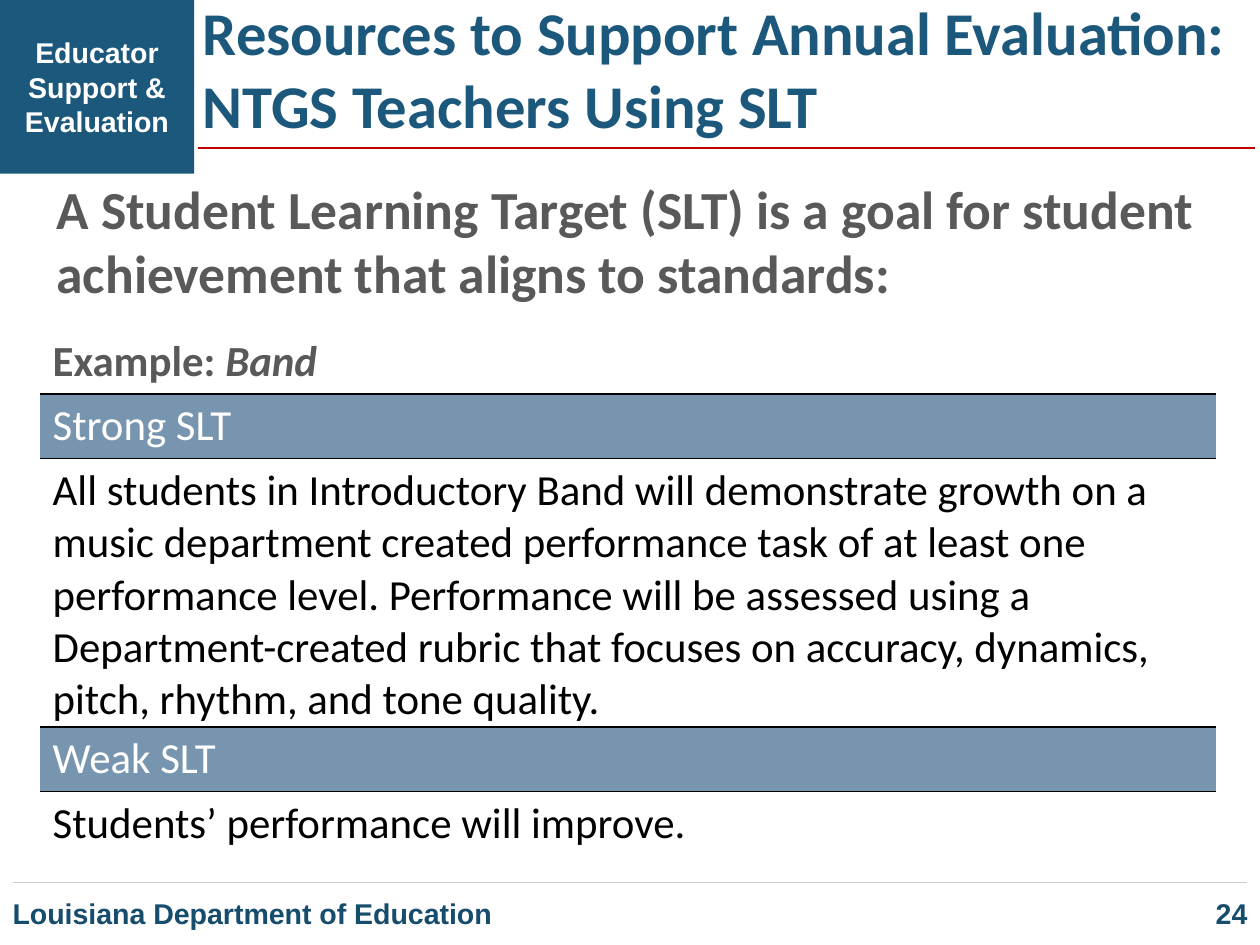
from dataclasses import dataclass

import pptx
import pptx.dml.color
import pptx.enum.shapes
import pptx.enum.text
import pptx.oxml
import pptx.oxml.ns
import pptx.util
from lxml import etree

WIDTH, HEIGHT = pptx.util.Inches(9.8), pptx.util.Inches(7.35)
NAVY, DEEP_NAVY, BAND_BLUE = "1B587C", "164C6C", "7895AF"
RED, GREY, LIGHT_GREY = "C00000", "595959", "CCCCCC"
WHITE, BLACK = "FFFFFF", "000000"
PLAIN_TABLE_STYLE = "{2D5ABB26-0587-4C30-8999-92F81FD0307C}"

ANCHOR = pptx.enum.text.MSO_ANCHOR
ALIGN = pptx.enum.text.PP_ALIGN


@dataclass
class Area:
    """A rectangle in percent of the slide's width and height."""
    left: float
    top: float
    width: float
    height: float

    def emu(self) -> tuple:
        return across(self.left), down(self.top), across(self.width), down(self.height)


@dataclass
class Label:
    text: str
    area: Area
    size: float
    color: str
    font: str = "Calibri"
    align: ALIGN = ALIGN.LEFT
    anchor: ANCHOR = ANCHOR.TOP
    left_inset: float = 0.1


@dataclass
class Rule:
    start: float
    end: float
    row: float
    color: str
    weight: float


@dataclass
class TableRow:
    runs: list
    height: float
    color: str
    fill: str = ""
    bold: bool = False


def across(share: float) -> int:
    return round(WIDTH * share / 100)


def down(share: float) -> int:
    return round(HEIGHT * share / 100)


def rgb(value: str):
    return pptx.dml.color.RGBColor.from_string(value)


def add_text(paragraph, text: str, *, size: float, color: str, font: str = "Calibri",
             bold: bool = True, italic: bool = False) -> None:
    run = paragraph.add_run()
    run.text = text
    run.font.name = font
    run.font.size = pptx.util.Pt(size)
    run.font.bold = bold
    run.font.italic = italic
    run.font.color.rgb = rgb(color)


def draw_label(slide, label: Label) -> None:
    frame = slide.shapes.add_textbox(*label.area.emu()).text_frame
    frame.word_wrap = True
    frame.vertical_anchor = label.anchor
    frame.margin_left = pptx.util.Inches(label.left_inset)
    paragraph = frame.paragraphs[0]
    paragraph.alignment = label.align
    add_text(paragraph, label.text, size=label.size, color=label.color, font=label.font)


def draw_rule(slide, rule: Rule) -> None:
    line = slide.shapes.add_connector(
        pptx.enum.shapes.MSO_CONNECTOR.STRAIGHT,
        across(rule.start), down(rule.row), across(rule.end), down(rule.row))
    line.line.color.rgb = rgb(rule.color)
    line.line.width = pptx.util.Pt(rule.weight)
    etree.SubElement(line._element.spPr, pptx.oxml.ns.qn("a:effectLst"))


def draw_badge(slide, area: Area) -> None:
    badge = slide.shapes.add_shape(pptx.enum.shapes.MSO_SHAPE.RECTANGLE, *area.emu())
    badge.shadow.inherit = False
    badge.fill.solid()
    badge.fill.fore_color.rgb = rgb(NAVY)
    badge.line.fill.background()


def add_border(cell, side: str) -> None:
    border = etree.SubElement(cell._tc.get_or_add_tcPr(), pptx.oxml.ns.qn(f"a:{side}"),
                              w=str(pptx.util.Pt(1)))
    fill = etree.SubElement(border, pptx.oxml.ns.qn("a:solidFill"))
    etree.SubElement(fill, pptx.oxml.ns.qn("a:srgbClr"), val=BLACK)


def draw_examples(slide, area: Area, rows: list[TableRow]) -> None:
    table = slide.shapes.add_table(len(rows), 1, *area.emu()).table
    table.first_row = table.horz_banding = False
    table._tbl.tblPr.find(pptx.oxml.ns.qn("a:tableStyleId")).text = PLAIN_TABLE_STYLE
    for index, row in enumerate(rows):
        table.rows[index].height = down(row.height)
        cell = table.cell(index, 0)
        cell.margin_bottom = 0
        for text, italic in row.runs:
            add_text(cell.text_frame.paragraphs[0], text, size=24, color=row.color,
                     bold=row.bold, italic=italic)
        if index > 0:
            add_border(cell, "lnT")
        if index < len(rows) - 1:
            add_border(cell, "lnB")
        if row.fill:
            cell.fill.solid()
            cell.fill.fore_color.rgb = rgb(row.fill)
        else:
            cell.fill.background()


LINE_ROW, STRONG_ROW = 6.85, 28.4
EXAMPLES = [
    TableRow([("Example: ", False), ("Band", True)], LINE_ROW, GREY, bold=True),
    TableRow([("Strong SLT", False)], LINE_ROW, WHITE, BAND_BLUE),
    TableRow([("All students in Introductory Band will demonstrate growth on a music "
               "department created performance task of at least one performance level. "
               "Performance will be assessed using a Department-created rubric that "
               "focuses on accuracy, dynamics, pitch, rhythm, and tone quality.", False)],
             STRONG_ROW, BLACK),
    TableRow([("Weak SLT", False)], LINE_ROW, WHITE, BAND_BLUE),
    TableRow([("Students’ performance will improve.", False)], LINE_ROW, BLACK),
]
LABELS = [
    Label("Educator Support & Evaluation", Area(-1.33, 2.99, 18.06, 12.38), 16, WHITE,
          "Arial", ALIGN.CENTER, ANCHOR.MIDDLE),
    Label("A Student Learning Target (SLT) is a goal for student achievement that "
          "aligns to standards:", Area(2.45, 17.96, 94.8, 75.92), 30, GREY,
          left_inset=0.2),
    Label("Resources to Support Annual Evaluation: NTGS Teachers Using SLT",
          Area(15.1, -1.22, 84.9, 12.79), 34, NAVY),
    Label("24", Area(72.04, 93.33, 27.96, 6.67), 16, DEEP_NAVY, "Arial",
          ALIGN.RIGHT, ANCHOR.MIDDLE),
    Label("Louisiana Department of Education", Area(0, 93.33, 48.57, 6.67), 16,
          DEEP_NAVY, "Arial", anchor=ANCHOR.MIDDLE),
]
RULES = [
    Rule(15.71, 99.59, 15.65, RED, 1.5),
    Rule(1.02, 98.98, 93.37, LIGHT_GREY, 0.75),
]


def main() -> None:
    deck = pptx.Presentation()
    deck.slide_width, deck.slide_height = WIDTH, HEIGHT
    slide = deck.slides.add_slide(deck.slide_layouts[6])
    draw_badge(slide, Area(0, 0, 15.41, 18.37))
    for label in LABELS:
        draw_label(slide, label)
    draw_examples(slide, Area(3.16, 34.83, 93.37, 55.8), EXAMPLES)
    for rule in RULES:
        draw_rule(slide, rule)
    deck.save("out.pptx")


if __name__ == "__main__":
    main()
